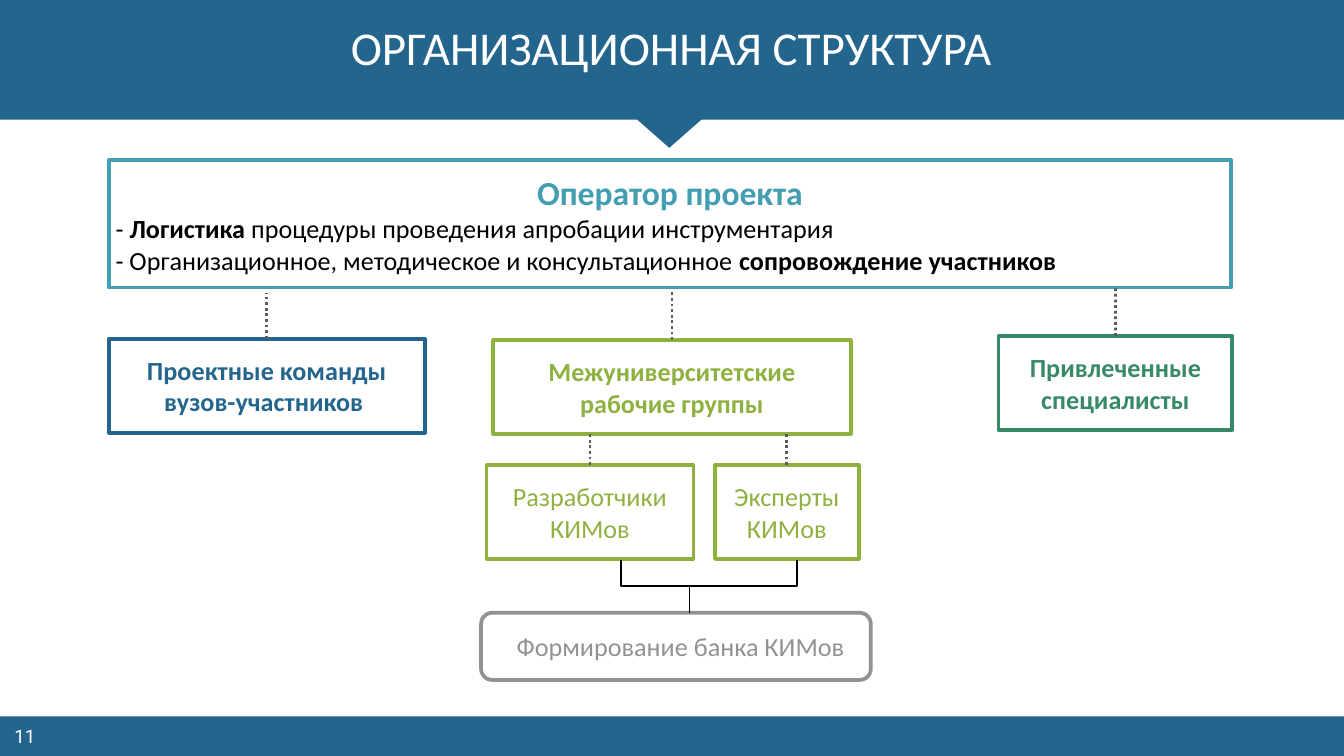
from lxml import etree
from pptx import Presentation
from pptx import util as u
from pptx.dml.color import RGBColor
from pptx.enum import dml, shapes, text
from pptx.oxml.ns import qn

NAVY = RGBColor(0x24, 0x65, 0x8D)
TEAL = RGBColor(0x42, 0x9E, 0xB0)
LIME = RGBColor(0x8F, 0xB1, 0x40)
GREEN = RGBColor(0x38, 0x89, 0x68)
GRAY = RGBColor(0x92, 0x92, 0x92)
DARK = RGBColor(0x5C, 0x5C, 0x5C)
BLACK = RGBColor(0, 0, 0)
WHITE = RGBColor(0xFF, 0xFF, 0xFF)

SHAPE = shapes.MSO_SHAPE
CENTER, LEFT = text.PP_ALIGN.CENTER, text.PP_ALIGN.LEFT
MIDDLE, TOP = text.MSO_ANCHOR.MIDDLE, text.MSO_ANCHOR.TOP

WIDTH = 10
HEIGHT = WIDTH * 9 / 16

TITLE = "ОРГАНИЗАЦИОННАЯ СТРУКТУРА"
PAGE = "11"

DECOR = [
    (SHAPE.RECTANGLE, (0, 5.33, WIDTH, 0.3), 0),
    (SHAPE.RECTANGLE, (0, 0, WIDTH, 0.89), 0),
    (SHAPE.ISOSCELES_TRIANGLE, (4.73, 0.88, 0.5, 0.22), 180),
]

OPERATOR_BOX = (0.81, 1.19, 8.35, 0.95)
OPERATOR = [
    (CENTER, 18, TEAL, [("Оператор проекта", True)]),
    (LEFT, 14, BLACK, [("- ", False), ("Логистика", True),
                       (" процедуры проведения апробации инструментария", False)]),
    (LEFT, 14, BLACK, [("- Организационное, методическое и консультационное ", False),
                       ("сопровождение участников", True)]),
]

UNITS = [
    ("Проектные команды вузов-участников ", (0.81, 2.52, 2.35, 0.7), NAVY, True, 2.18),
    ("Межуниверситетские рабочие группы", (3.67, 2.53, 2.66, 0.7), LIME, True, 2.16),
    ("Привлеченные специалисты", (7.43, 2.5, 1.74, 0.7), GREEN, True, 2.14),
    ("Разработчики КИМов", (3.62, 3.46, 1.54, 0.7), LIME, False, 3.23),
    ("Эксперты КИМов", (5.32, 3.46, 1.07, 0.7), LIME, False, 3.23),
]

BANK = "Формирование банка КИМов"
BANK_BOX = (3.58, 4.56, 2.9, 0.5)
BRANCH_STARTS = [4.62, 5.93]
BRANCH_TOP, BRANCH_BEND, BRANCH_X = 4.17, 4.36, 5.13


def apply(target, values):
    for name, value in values.items():
        setattr(target, name, value)


def add_box(slide, kind, box, fill, outline=None):
    shape = slide.shapes.add_shape(kind, *map(u.Inches, box))
    shape.shadow.inherit = False
    shape.fill.solid()
    shape.fill.fore_color.rgb = fill
    if outline is None:
        shape.line.fill.background()
    else:
        shape.line.color.rgb = outline
        shape.line.width = u.Pt(2)
    return shape


def write(shape, paragraphs, inset=0.05, anchor=MIDDLE, before=0, font="Calibri"):
    frame = shape.text_frame
    margins = ("margin_left", "margin_top", "margin_right", "margin_bottom")
    apply(frame, {"word_wrap": True, "vertical_anchor": anchor,
                  **dict.fromkeys(margins, u.Inches(inset))})
    for i, (align, size, color, runs) in enumerate(paragraphs):
        paragraph = frame.add_paragraph() if i else frame.paragraphs[0]
        apply(paragraph, {"alignment": align, "space_before": u.Pt(before)})
        for words, bold in runs:
            run = paragraph.add_run()
            run.text = words
            apply(run.font, {"name": font, "size": u.Pt(size), "bold": bold})
            run.font.color.rgb = color


def add_label(slide, box, words, size, **style):
    label = slide.shapes.add_textbox(*map(u.Inches, box))
    write(label, [(CENTER, size, WHITE, [(words, False)])], inset=0, **style)


def add_link(slide, unit, box, end_y):
    left, top, width, _ = box
    x = left + width / 2
    link = slide.shapes.add_connector(
        shapes.MSO_CONNECTOR.STRAIGHT, *map(u.Inches, (x, top, x, end_y)))
    link.begin_connect(unit, 0)
    link.line.color.rgb = DARK
    apply(link.line, {"width": u.Pt(1.5), "dash_style": dml.MSO_LINE.ROUND_DOT})
    etree.SubElement(link._element.spPr, qn("a:effectLst"))


def add_branch(slide, start_x):
    points = [(start_x, BRANCH_BEND), (BRANCH_X, BRANCH_BEND), (BRANCH_X, BANK_BOX[1])]
    builder = slide.shapes.build_freeform(u.Inches(start_x), u.Inches(BRANCH_TOP))
    builder.add_line_segments([(u.Inches(x), u.Inches(y)) for x, y in points], close=False)
    branch = builder.convert_to_shape()
    branch.shadow.inherit = False
    branch.fill.background()
    branch.line.color.rgb = BLACK
    branch.line.width = u.Pt(0.75)


def main():
    deck = Presentation()
    apply(deck, {"slide_width": u.Inches(WIDTH), "slide_height": u.Inches(HEIGHT)})
    slide = deck.slides.add_slide(deck.slide_layouts[6])

    for kind, box, rotation in DECOR:
        add_box(slide, kind, box, NAVY).rotation = rotation
    add_label(slide, (0.02, 5.39, 0.33, 0.17), PAGE, 10, font="Roboto")
    add_label(slide, (0.43, 0.14, 9.13, 0.37), TITLE, 25.2, anchor=TOP)

    operator = add_box(slide, SHAPE.RECTANGLE, OPERATOR_BOX, WHITE, TEAL)
    write(operator, OPERATOR)

    for words, box, color, bold, end_y in UNITS:
        unit = add_box(slide, SHAPE.RECTANGLE, box, WHITE, color)
        write(unit, [(CENTER, 14, color, [(words, bold)])], before=5)
        add_link(slide, unit, box, end_y)

    bank = add_box(slide, SHAPE.ROUNDED_RECTANGLE, BANK_BOX, WHITE, GRAY)
    write(bank, [(CENTER, 14, GRAY, [(BANK, False)])], before=5)
    bank.text_frame.margin_left = u.Inches(0.12)
    for start_x in BRANCH_STARTS:
        add_branch(slide, start_x)

    deck.save("out.pptx")


if __name__ == "__main__":
    main()
